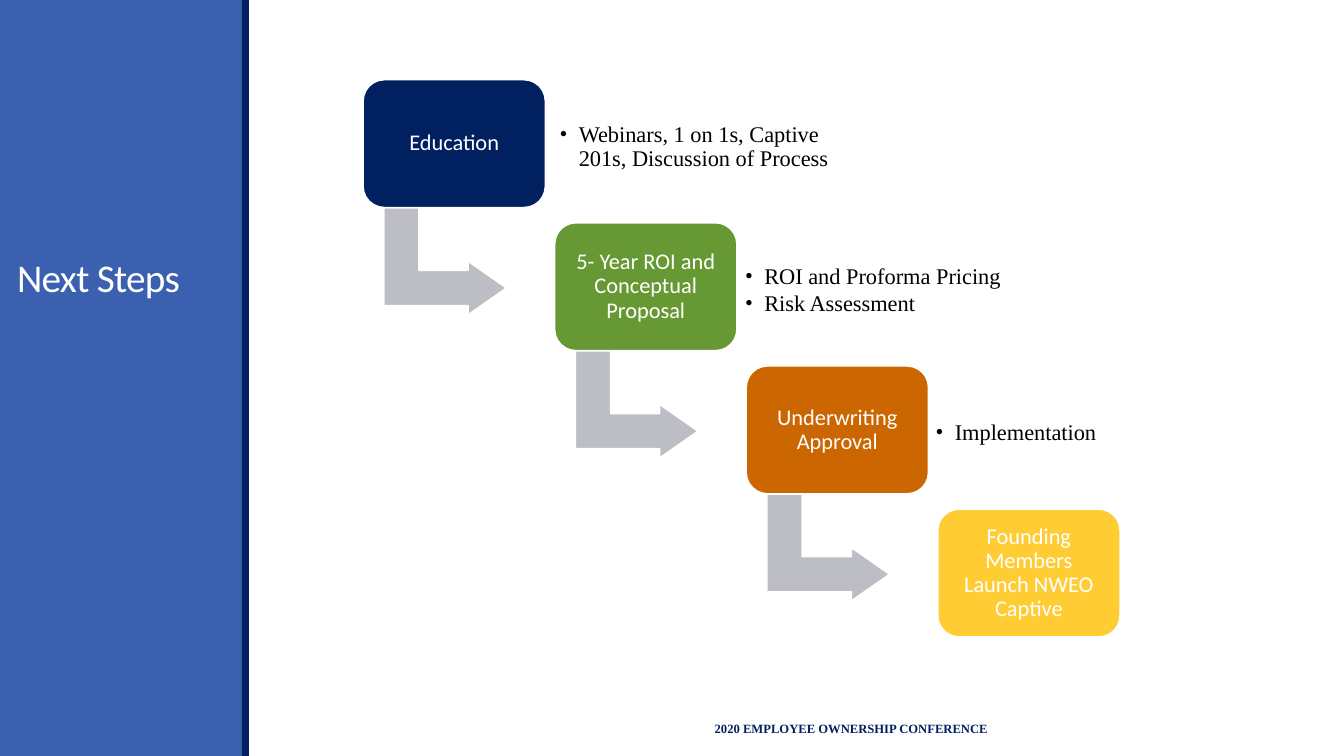
from dataclasses import dataclass

from lxml import etree
from pptx import Presentation
from pptx import util as u
from pptx.dml.color import RGBColor
from pptx.enum import shapes, text
from pptx.oxml import ns

EMU_PER_PX = 9144  # 100 px to the inch


@dataclass(frozen=True)
class Theme:
    panel: str = "3B60AF"
    navy: str = "002060"
    green: str = "669933"
    orange: str = "CC6600"
    yellow: str = "FFCC33"
    arrow: str = "BDBDC5"
    white: str = "FFFFFF"
    black: str = "000000"
    sans: str = "Calibri"
    serif: str = "Times New Roman"
    title_size: int = 28
    body_size: int = 16
    footer_size: int = 9


@dataclass(frozen=True)
class Box:
    left: int
    top: int
    width: int
    height: int

    def emu(self) -> tuple[int, int, int, int]:
        return px(self.left), px(self.top), px(self.width), px(self.height)


@dataclass(frozen=True)
class Step:
    label: str
    color: str
    points: tuple[str, ...] = ()
    list_left: int = 0
    list_width: int = 0


THEME = Theme()
FIRST_CARD = Box(360, 79, 181, 127)
STEP_RIGHT, STEP_DOWN = 190, 142
INSET = 7
STEPS = (
    Step("Education", THEME.navy,
         ("Webinars, 1 on 1s, Captive 201s, Discussion of Process",), 548, 298),
    Step("5- Year ROI and Conceptual Proposal", THEME.green,
         ("ROI and Proforma Pricing", "Risk Assessment"), 732, 371),
    Step("Underwriting Approval", THEME.orange, ("Implementation",), 921, 208),
    Step("Founding Members Launch NWEO Captive", THEME.yellow),
)


def px(length: int) -> int:
    return u.Emu(length * EMU_PER_PX)


def place(shape, box: Box) -> None:
    shape.left, shape.top, shape.width, shape.height = box.emu()


def style_runs(frame, font: str, size: int, color: str, bold: bool = False) -> None:
    for para in frame.paragraphs:
        for span in para.runs:
            span.font.name = font
            span.font.size = u.Pt(size)
            span.font.bold = bold
            span.font.color.rgb = RGBColor.from_string(color)


def set_frame(frame, anchor: text.MSO_ANCHOR, inset: int | None = None) -> None:
    frame.word_wrap = True
    frame.auto_size = text.MSO_AUTO_SIZE.NONE
    frame.vertical_anchor = anchor
    if inset is not None:
        frame.margin_left = frame.margin_right = px(inset)
        frame.margin_top = frame.margin_bottom = px(inset)


def add_filled(slide, kind: shapes.MSO_SHAPE, box: Box, color: str, outlined: bool = True):
    shape = slide.shapes.add_shape(kind, *box.emu())
    shape.shadow.inherit = False
    shape.fill.solid()
    shape.fill.fore_color.rgb = RGBColor.from_string(color)
    if outlined:
        shape.line.color.rgb = RGBColor.from_string(THEME.white)
        shape.line.width = u.Pt(1.25)
    else:
        shape.line.fill.background()
    return shape


def add_side_panel(slide) -> None:
    """Draw the two bands behind the placeholders."""
    bands = ((Box(0, 0, 247, 750), THEME.panel), (Box(240, 0, 7, 750), THEME.navy))
    for index, (box, color) in enumerate(bands):
        band = add_filled(slide, shapes.MSO_SHAPE.RECTANGLE, box, color, outlined=False)
        slide.shapes._spTree.insert(2 + index, band._element)


def fill_title(slide) -> None:
    title = slide.shapes.title
    place(title, Box(7, 53, 240, 250))
    frame = title.text_frame
    frame.text = "Next Steps"
    set_frame(frame, text.MSO_ANCHOR.BOTTOM)
    para = frame.paragraphs[0]
    para.alignment = text.PP_ALIGN.LEFT
    para.line_spacing = 0.85
    style_runs(frame, THEME.sans, THEME.title_size, THEME.white)
    para.runs[0].font._element.set("spc", "-50")


def add_card(slide, step: Step, box: Box) -> None:
    card = add_filled(slide, shapes.MSO_SHAPE.ROUNDED_RECTANGLE, box, step.color)
    card.adjustments[0] = 0.167
    frame = card.text_frame
    frame.text = step.label
    set_frame(frame, text.MSO_ANCHOR.MIDDLE, INSET)
    frame.paragraphs[0].alignment = text.PP_ALIGN.CENTER
    frame.paragraphs[0].line_spacing = 0.9
    style_runs(frame, THEME.sans, THEME.body_size, THEME.white)


def add_arrow(slide, card: Box) -> None:
    """Draw the bent arrow leading from a card to the next one."""
    box = Box(card.left + 28, card.top + 119, 107, 122)
    arrow = add_filled(slide, shapes.MSO_SHAPE.BENT_UP_ARROW, box, THEME.arrow)
    arrow.rotation = 90
    for index, value in enumerate((0.328, 0.25, 0.358)):
        arrow.adjustments[index] = value


def add_bullet(para) -> None:
    properties = para._p.get_or_add_pPr()
    properties.set("marL", str(px(19)))
    properties.set("indent", str(px(-19)))
    etree.SubElement(properties, ns.qn("a:buFont")).set("typeface", THEME.serif)
    etree.SubElement(properties, ns.qn("a:buChar")).set("char", "•")


def fill_list(body, step: Step, card: Box) -> None:
    place(body, Box(step.list_left, card.top + 16, step.list_width, 102))
    frame = body.text_frame
    frame.text = "\n".join(step.points)
    set_frame(frame, text.MSO_ANCHOR.MIDDLE, INSET)
    for para in frame.paragraphs:
        add_bullet(para)
        para.line_spacing = 0.9
        para.space_before = u.Pt(0)
        para.space_after = u.Pt(2)
    style_runs(frame, THEME.serif, THEME.body_size, THEME.black)


def add_footer(slide) -> None:
    footer = slide.shapes.add_textbox(*Box(699, 703, 406, 40).emu())
    frame = footer.text_frame
    frame.text = "2020 EMPLOYEE OWNERSHIP CONFERENCE"
    set_frame(frame, text.MSO_ANCHOR.MIDDLE)
    style_runs(frame, THEME.serif, THEME.footer_size, THEME.navy, bold=True)


def main() -> None:
    deck = Presentation()
    deck.slide_width, deck.slide_height = px(1333), px(750)
    page = deck.slides.add_slide(deck.slide_layouts.get_by_name("Comparison"))
    bodies = [holder for holder in page.placeholders if holder.placeholder_format.idx > 0]

    add_side_panel(page)
    fill_title(page)
    for index, (step, body) in enumerate(zip(STEPS, bodies)):
        card = Box(FIRST_CARD.left + index * STEP_RIGHT, FIRST_CARD.top + index * STEP_DOWN,
                   FIRST_CARD.width, FIRST_CARD.height)
        if step is not STEPS[-1]:
            add_arrow(page, card)
        add_card(page, step, card)
        if step.points:
            fill_list(body, step, card)
        else:
            body._element.getparent().remove(body._element)
    add_footer(page)
    deck.save("out.pptx")


if __name__ == "__main__":
    main()
